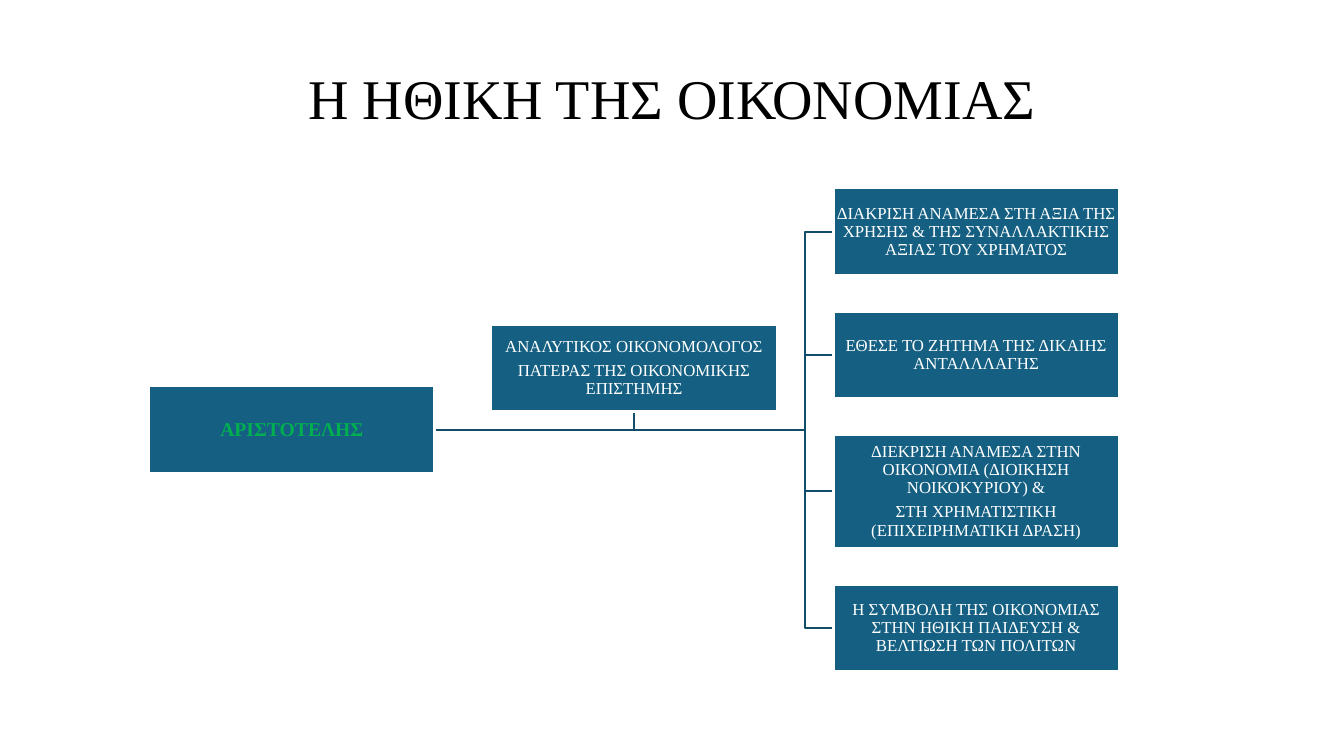
"""Build a slide with a horizontal hierarchy on the ethics of the economy."""
from dataclasses import dataclass

from pptx import Presentation
from pptx.dml.color import RGBColor as Rgb
from pptx.enum import text as t
from pptx.enum.shapes import MSO_SHAPE as Kind
from pptx.util import Pt


@dataclass
class Theme:
    font: str = "Times New Roman"
    ink: str = "000000"
    box: str = "156082"
    wire: str = "114D68"
    light: str = "FFFFFF"
    green: str = "00B050"
    head: int = 40
    name: int = 14
    body: int = 12
    line: float = 1.5


theme = Theme()
W, H, TALL = 203.8, 62, 81
GAP_X, GAP_Y = 40.6, 26
LEFT, TOP, MID = 106.6, 134.5, 307
COLS = [LEFT + i * (W + GAP_X) for i in range(3)]
SPINE = COLS[2] - GAP_X / 2
NOTE_Y = 232

root = "ΑΡΙΣΤΟΤΕΛΗΣ"
note = "ΑΝΑΛΥΤΙΚΟΣ ΟΙΚΟΝΟΜΟΛΟΓΟΣ\nΠΑΤΕΡΑΣ ΤΗΣ ΟΙΚΟΝΟΜΙΚΗΣ ΕΠΙΣΤΗΜΗΣ"
leaves = [
    ("ΔΙΑΚΡΙΣΗ ΑΝΑΜΕΣΑ ΣΤΗ ΑΞΙΑ ΤΗΣ ΧΡΗΣΗΣ & ΤΗΣ ΣΥΝΑΛΛΑΚΤΙΚΗΣ ΑΞΙΑΣ ΤΟΥ ΧΡΗΜΑΤΟΣ", H),
    ("ΕΘΕΣΕ ΤΟ ΖΗΤΗΜΑ ΤΗΣ ΔΙΚΑΙΗΣ ΑΝΤΑΛΛΛΑΓΗΣ", H),
    ("ΔΙΕΚΡΙΣΗ ΑΝΑΜΕΣΑ ΣΤΗΝ ΟΙΚΟΝΟΜΙΑ (ΔΙΟΙΚΗΣΗ ΝΟΙΚΟΚΥΡΙΟΥ) &\n"
     "ΣΤΗ ΧΡΗΜΑΤΙΣΤΙΚΗ (ΕΠΙΧΕΙΡΗΜΑΤΙΚΗ ΔΡΑΣΗ)", TALL),
    ("Η ΣΥΜΒΟΛΗ ΤΗΣ ΟΙΚΟΝΟΜΙΑΣ ΣΤΗΝ ΗΘΙΚΗ ΠΑΙΔΕΥΣΗ & ΒΕΛΤΙΩΣΗ ΤΩΝ ΠΟΛΙΤΩΝ", H),
]

deck = Presentation()
deck.slide_width, deck.slide_height = Pt(960), Pt(540)
slide = deck.slides.add_slide(deck.slide_layouts[6])


def write(shape, words, size, color, after=0, bold=False):
    """Fill a shape with centred, styled paragraphs."""
    frame = shape.text_frame
    frame.word_wrap = True
    frame.text = words
    for para in frame.paragraphs:
        para.alignment = t.PP_ALIGN.CENTER
        para.line_spacing = 0.9
        para.space_after = Pt(after)
        for run in para.runs:
            run.font.name = theme.font
            run.font.size = Pt(size)
            run.font.bold = bold
            run.font.color.rgb = Rgb.from_string(color)
    return frame


title = slide.shapes.add_textbox(Pt(120), Pt(27), Pt(720), Pt(70.6))
frame = write(title, "Η ΗΘΙΚΗ ΤΗΣ ΟΙΚΟΝΟΜΙΑΣ", theme.head, theme.ink)
frame.vertical_anchor = t.MSO_ANCHOR.BOTTOM

boxes = [(root, COLS[0], MID - H / 2, H, theme.name, theme.green, True)]
wires = [[(COLS[1] + W / 2, MID), (COLS[1] + W / 2, NOTE_Y + H)]]
y = TOP
for words, high in leaves:
    boxes.append((words, COLS[2], y, high, theme.body, theme.light, False))
    mid = y + high / 2
    wires.append([(SPINE, MID), (SPINE, mid), (COLS[2], mid)])
    y += high + GAP_Y
boxes.append((note, COLS[1], NOTE_Y, H, theme.body, theme.light, False))

for turns in wires:
    pen = slide.shapes.build_freeform(Pt(COLS[0] + W), Pt(MID))
    pen.add_line_segments([(Pt(a), Pt(b)) for a, b in turns], close=False)
    wire = pen.convert_to_shape()
    wire.shadow.inherit = False
    wire.fill.background()
    wire.line.color.rgb = Rgb.from_string(theme.wire)
    wire.line.width = Pt(theme.line)

for words, x, y, high, size, color, bold in boxes:
    box = slide.shapes.add_shape(Kind.RECTANGLE, Pt(x), Pt(y), Pt(W), Pt(high))
    box.shadow.inherit = False
    box.fill.solid()
    box.fill.fore_color.rgb = Rgb.from_string(theme.box)
    box.line.color.rgb = Rgb.from_string(theme.light)
    box.line.width = Pt(theme.line)
    frame = write(box, words, size, color, size * 0.35, bold)
    frame.vertical_anchor = t.MSO_ANCHOR.MIDDLE
    frame.margin_left = frame.margin_right = Pt(0.6)
    frame.margin_top = frame.margin_bottom = Pt(0.6)

deck.save("out.pptx")
